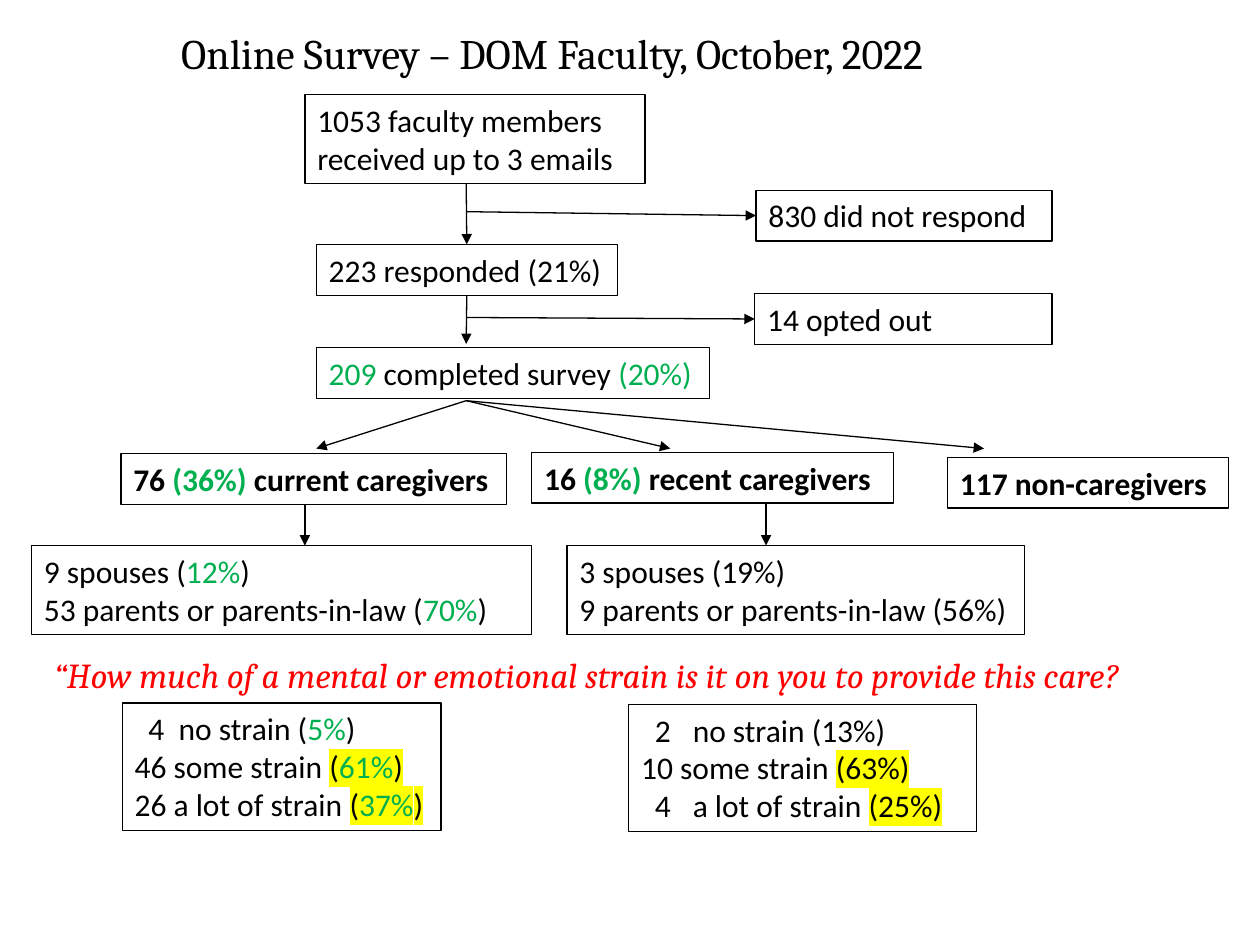
from pptx import Presentation
from pptx.dml.color import RGBColor
from pptx.enum.shapes import MSO_CONNECTOR as Connector
from pptx.enum.text import MSO_AUTO_SIZE as AutoSize
from pptx.oxml.ns import qn
from pptx.util import Inches, Pt
from lxml.etree import SubElement

BLACK = RGBColor(0x00, 0x00, 0x00)
GREEN = RGBColor(0x00, 0xB0, 0x50)
RED = RGBColor(0xFF, 0x00, 0x00)
YELLOW = RGBColor(0xFF, 0xFF, 0x00)

# The grid has 100 columns and 75 rows of square cells.
CELL = Inches(0.1)
LINE_ROWS = 3.03
TOP, LEFT, BOTTOM = 0, 1, 2


def cells(count):
    return round(count * CELL)


def add_run(paragraph, words, color=BLACK, highlight=None, font="Calibri",
            size=18, bold=None, italic=None):
    run = paragraph.add_run()
    run.text = words
    run.font.color.rgb = color
    run.font.name = font
    run.font.size = Pt(size)
    run.font.bold, run.font.italic = bold, italic
    if highlight is not None:
        properties = run.font._element
        mark = SubElement(properties, qn("a:highlight"))
        SubElement(mark, qn("a:srgbClr"), val=str(highlight))
        properties.find(qn("a:solidFill")).addnext(mark)


def hang(paragraph, number_at, words_at):
    """Indent the number, and let its tab reach the column of the words."""
    properties = paragraph._p.get_or_add_pPr()
    properties.set("marL", str(cells(words_at)))
    properties.set("indent", str(cells(number_at - words_at)))


def add_text(slide, col, row, cols, rows, lines, wrap=True, **style):
    """Each line is a list of runs: (words, color, highlight)."""
    box = slide.shapes.add_textbox(*map(cells, (col, row, cols, rows)))
    frame = box.text_frame
    frame.word_wrap = wrap
    frame.auto_size = AutoSize.SHAPE_TO_FIT_TEXT
    for index, runs in enumerate(lines):
        paragraph = frame.add_paragraph() if index else frame.paragraphs[0]
        for run in runs:
            add_run(paragraph, *run, **style)
    return box


def add_box(slide, col, row, cols, lines, wrap=True, text_lines=None, **style):
    rows = 1 + LINE_ROWS * (text_lines or len(lines))
    box = add_text(slide, col, row, cols, rows, lines, wrap, **style)
    box.line.color.rgb = BLACK
    box.line.width = Pt(0.75)
    return box


def add_arrow(slide, start, end, source=None, target=None):
    """Source and target are (box, side) pairs to join."""
    arrow = slide.shapes.add_connector(
        Connector.STRAIGHT, *map(cells, (*start, *end)))
    arrow.line.color.rgb = BLACK
    arrow.line.width = Pt(0.75)
    SubElement(arrow.line._get_or_add_ln(), qn("a:tailEnd"), type="triangle")
    SubElement(arrow._element.spPr, qn("a:effectLst"))
    if source:
        arrow.begin_connect(*source)
    if target:
        arrow.end_connect(*target)


def add_response_flow(slide):
    add_box(slide, 24.2, 7.5, 27,
            [[("1053 faculty members received up to 3 emails",)]], text_lines=2)
    responded = add_box(slide, 25.1, 19.4, 23.9,
                        [[("223 responded (21%)",)]], wrap=False)
    silent = add_box(slide, 60, 15.1, 23.5,
                     [[("830 did not respond",)]], wrap=False)
    opted_out = add_box(slide, 59.9, 23.3, 23.6, [[("14 opted out",)]])
    add_box(slide, 25.1, 27.6, 31.2,
            [[("209", GREEN), (" completed survey ",), ("(20%)", GREEN)]],
            wrap=False)

    add_arrow(slide, (37, 14.6), (37, 19.4), target=(responded, TOP))
    add_arrow(slide, (37, 16.8), (60, 17.1), target=(silent, LEFT))
    add_arrow(slide, (37, 23.5), (37, 27.3), source=(responded, BOTTOM))
    add_arrow(slide, (37, 25.2), (59.9, 25.2), target=(opted_out, LEFT))


def add_caregiver_groups(slide):
    add_box(slide, 9.6, 36, 30.6,
            [[("76 ",), ("(36%) ", GREEN), ("current caregivers",)]], bold=True)
    add_box(slide, 42.2, 35.9, 28.7,
            [[("16 ",), ("(8%) ", GREEN), ("recent caregivers",)]],
            wrap=False, bold=True)
    add_box(slide, 75.2, 36.3, 22.3, [[("117 non-caregivers",)]],
            wrap=False, bold=True)
    for group_col in (25.1, 53.2, 78.1):
        add_arrow(slide, (37, 31.8), (group_col, 35.6))

    add_box(slide, 2.5, 43.3, 39.7, [
        [("9 spouses (",), ("12%", GREEN), (")",)],
        [("53 parents or parents-in-law (",), ("70%", GREEN), (")",)]])
    add_box(slide, 45, 43.3, 36.3, [
        [("3 spouses (19%)",)],
        [("9 parents or parents-in-law (56%)",)]])
    for relation_col in (24.2, 60.8):
        add_arrow(slide, (relation_col, 40), (relation_col, 43.3))


def add_strain_answers(slide):
    def marked_share(share):
        return [("(", BLACK, YELLOW), (share, GREEN, YELLOW),
                (")", BLACK, YELLOW)]

    current = add_box(slide, 9.7, 55.8, 25.3, [
        [("4\tno strain (",), ("5%", GREEN), (")",)],
        [("46 some strain ",), *marked_share("61%")],
        [("26 a lot of strain ",), *marked_share("37%")]])
    recent = add_box(slide, 49.9, 55.9, 27.6, [
        [("2\tno strain (13%)",)],
        [("10 some strain ",), ("(63%)", BLACK, YELLOW)],
        [("4\ta lot of strain ",), ("(25%)", BLACK, YELLOW)]])
    hang(current.text_frame.paragraphs[0], 1.1, 3.5)
    for answer in (0, 2):
        hang(recent.text_frame.paragraphs[answer], 1.1, 4.1)


def main():
    deck = Presentation()
    deck.slide_width, deck.slide_height = cells(100), cells(75)
    slide = deck.slides.add_slide(deck.slide_layouts[6])
    add_response_flow(slide)
    add_caregiver_groups(slide)
    add_strain_answers(slide)
    add_text(slide, 13.4, 1.7, 79.6, 5,
             [[("Online Survey – DOM Faculty, October, 2022",)]],
             font="Cambria", size=24)
    add_text(slide, 3.3, 51.4, 103.3, 4.4,
             [[("“How much of a mental or emotional strain is it on you "
                "to provide this care?", RED)]],
             font="Cambria", size=20, italic=True)
    deck.save("out.pptx")


if __name__ == "__main__":
    main()
